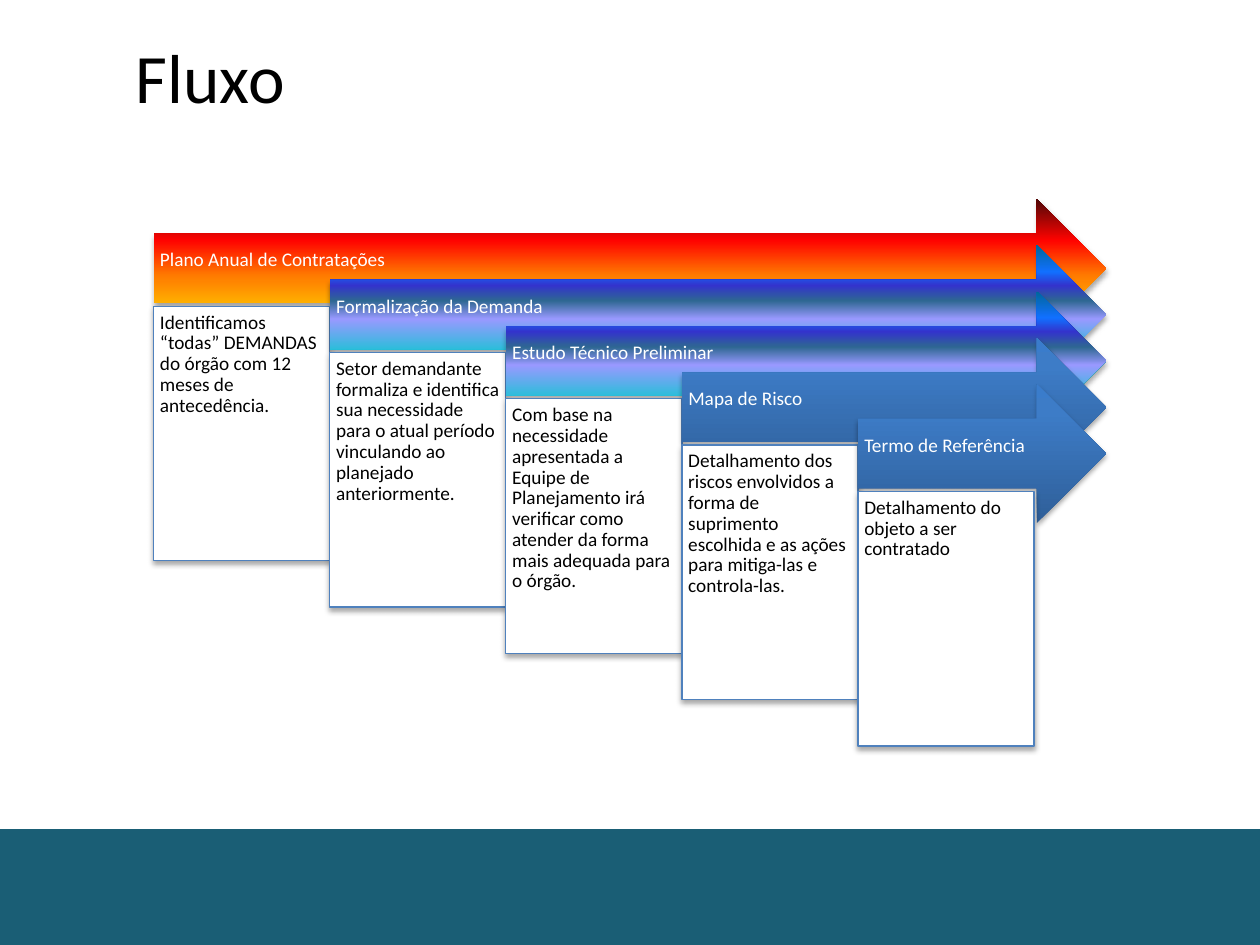
"""Build the Fluxo slide: five staggered arrows, each with a detail card."""
from dataclasses import dataclass

from lxml.etree import SubElement as Sub
from pptx import Presentation
from pptx.dml.color import RGBColor as RGB
from pptx.enum.shapes import MSO_SHAPE as Form
from pptx.enum.text import MSO_ANCHOR as Anchor, PP_ALIGN as Align
from pptx.oxml.ns import qn
from pptx.util import Inches, Pt

WIDE, HIGH = 10, 7.5
LEFT, TOP, RIGHT = 1.22, 1.58, 8.78
COL, ROW = 5.59 / 4, 1.47 / 4
HEAD, DROP, CARD = 1.1, 0.85, 2.02


@dataclass(frozen=True)
class Theme:
    font: str = "Calibri"
    title: float = 39.6
    body: float = 11
    ink: str = "000000"
    paper: str = "FFFFFF"
    band: str = "1A5E75"
    edge: str = "4F81BD"
    fire: tuple = ((0, "FFF200"), (45, "FF7A00"), (70, "FF0300"), (100, "4D0808"))
    sea: tuple = ((0, "3399FF"), (16, "00CCCC"), (47, "9999FF"), (60, "2E6792"),
                  (71, "3333CC"), (81, "1170FF"), (100, "006699"))
    blue: tuple = ((0, "2F5F99"), (80, "3D7CC7"), (100, "3A7CCB"))


LOOK = Theme()
STEPS = (
    ("Plano Anual de Contratações", LOOK.fire,
     "Identificamos “todas” DEMANDAS do órgão com 12 meses de antecedência."),
    ("Formalização da Demanda", LOOK.sea,
     "Setor demandante formaliza e identifica sua necessidade para o atual "
     "período vinculando ao planejado anteriormente."),
    ("Estudo Técnico Preliminar", LOOK.sea,
     "Com base na necessidade apresentada a Equipe de Planejamento irá "
     "verificar como atender da forma mais adequada para o órgão."),
    ("Mapa de Risco", LOOK.blue,
     "Detalhamento dos riscos envolvidos a forma de suprimento escolhida "
     "e as ações para mitiga-las e controla-las."),
    ("Termo de Referência", LOOK.blue, "Detalhamento do objeto a ser contratado"),
)


def add_form(slide, form, *area):
    """Add a preset shape with neither line nor shadow."""
    shape = slide.shapes.add_shape(form, *map(Inches, area))
    shape.shadow.inherit = False
    shape.line.fill.background()
    return shape


def paint(shape, hue):
    """Fill a shape with one colour."""
    shape.fill.solid()
    shape.fill.fore_color.rgb = RGB.from_string(hue)


def blend(shape, stops):
    """Fill a shape with a gradient that rises from the bottom."""
    shape.fill.gradient()
    shape.fill.gradient_angle = 90
    ramp = shape.element.spPr.find(".//" + qn("a:gsLst"))
    ramp.clear()
    for share, hue in stops:
        stop = Sub(ramp, qn("a:gs"), pos=str(share * 1000))
        Sub(stop, qn("a:srgbClr"), val=hue)


def shade(shape):
    """Cast a soft shadow straight down."""
    effect = shape.element.spPr.find(qn("a:effectLst"))
    cast = Sub(effect, qn("a:outerShdw"), blurRad=str(Pt(3.1)),
               dist=str(Pt(1.8)), dir="5400000", rotWithShape="0")
    tone = Sub(cast, qn("a:srgbClr"), val=LOOK.ink)
    Sub(tone, qn("a:alpha"), val="35000")


def write(shape, text, size, hue, anchor, pads):
    """Set the text of a shape, with pads as left, top, right, bottom."""
    frame = shape.text_frame
    frame.word_wrap = True
    frame.vertical_anchor = anchor
    (frame.margin_left, frame.margin_top,
     frame.margin_right, frame.margin_bottom) = map(Inches, pads)
    para = frame.paragraphs[0]
    para.text = text
    para.alignment = Align.LEFT
    para.font.name = LOOK.font
    para.font.size = Pt(size)
    para.font.color.rgb = RGB.from_string(hue)
    return para


def add_title(slide, text):
    """Add the slide title."""
    box = slide.shapes.add_textbox(*map(Inches, (0.98, 0.21, 8.35, 0.79)))
    write(box, text, LOOK.title, LOOK.ink, Anchor.MIDDLE, (0.1, 0.05, 0.1, 0.05))


def add_band(slide):
    """Add the band along the foot of the slide."""
    top = 6.58
    paint(add_form(slide, Form.RECTANGLE, 0, top, WIDE, HIGH - top), LOOK.band)


def add_step(slide, rank, name, stops, note):
    """Add one arrow and the card that hangs from it."""
    left, top = LEFT + rank * COL, TOP + rank * ROW
    arrow = add_form(slide, Form.RIGHT_ARROW, left, top, RIGHT - left, HEAD)
    blend(arrow, stops)
    card = add_form(slide, Form.RECTANGLE, left, top + DROP, COL, CARD)
    paint(card, LOOK.paper)
    card.line.color.rgb = RGB.from_string(LOOK.edge)
    card.line.width = Pt(0.75)
    texts = (
        (arrow, name, LOOK.paper, Anchor.MIDDLE, (0.05, 0.05, 0.28, 0.17)),
        (card, note, LOOK.ink, Anchor.TOP, (0.05,) * 4),
    )
    for shape, text, hue, anchor, pads in texts:
        shade(shape)
        para = write(shape, text, LOOK.body, hue, anchor, pads)
        para.line_spacing = 0.9
        para.space_after = Pt(0.35 * LOOK.body)


def main():
    """Build and save the slide."""
    deck = Presentation()
    deck.slide_width, deck.slide_height = Inches(WIDE), Inches(HIGH)
    slide = deck.slides.add_slide(deck.slide_layouts[6])
    add_band(slide)
    add_title(slide, "Fluxo")
    for rank, step in enumerate(STEPS):
        add_step(slide, rank, *step)
    deck.save("out.pptx")


if __name__ == "__main__":
    main()
